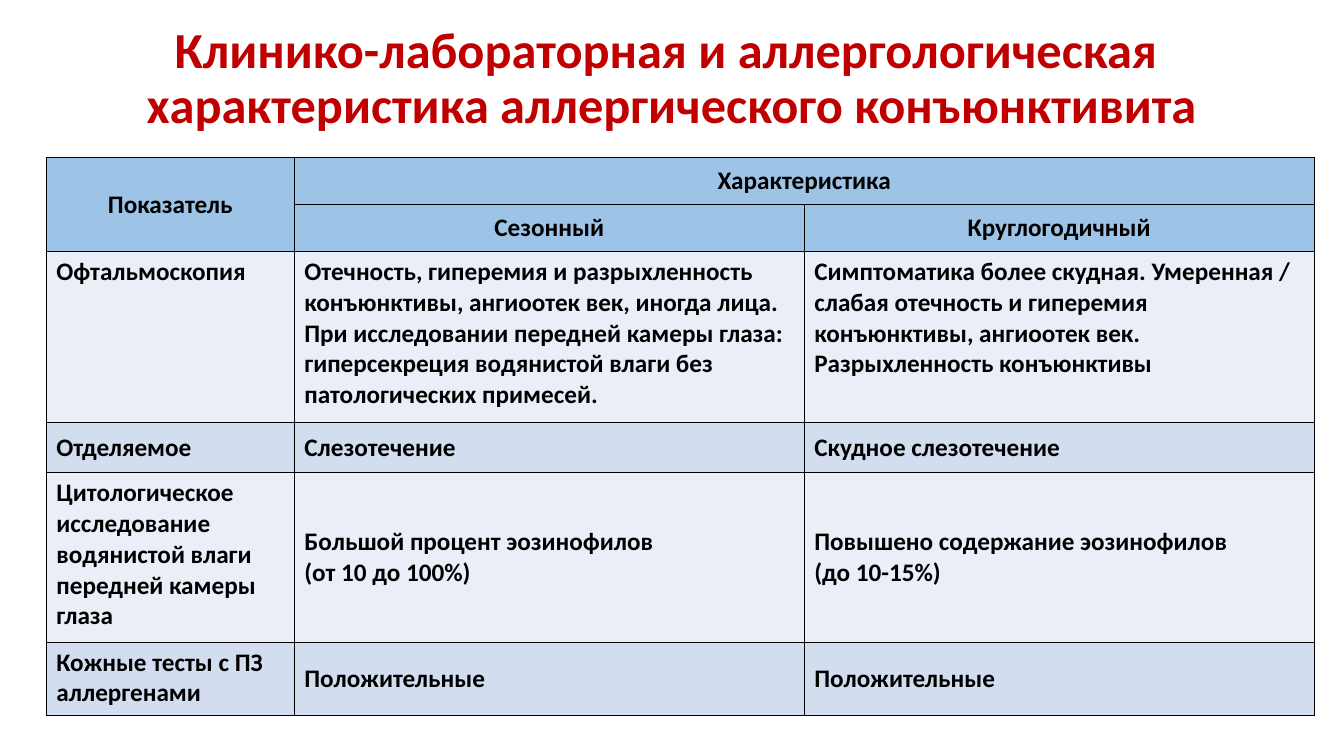
from lxml.etree import SubElement
from pptx import Presentation
from pptx.dml.color import RGBColor
from pptx.enum.text import MSO_ANCHOR, PP_ALIGN
from pptx.oxml.ns import qn
from pptx.util import Pt

COLORS = {
    "title": "C00000",
    "text": "000000",
    "border": "000000",
    "header": "9DC3E6",
    "light": "EAEFF7",
    "dark": "D2DEEF",
}
TITLE = ("Клинико-лабораторная и аллергологическая \v"
         "характеристика аллергического конъюнктивита")
COLUMN_WIDTHS = [177.1, 364.3, 364.3]
ROW_HEIGHTS = [33.6, 33.6, 122, 36, 121, 52.6]
HEADER_ROWS = 2
# Each line of a cell is a paragraph
ROWS = [
    ["Показатель", "Характеристика", ""],
    ["", "Сезонный", "Круглогодичный"],
    ["Офтальмоскопия",
     "Отечность, гиперемия и разрыхленность конъюнктивы, ангиоотек век, иногда лица.\n"
     "При исследовании передней камеры глаза: гиперсекреция водянистой влаги без "
     "патологических примесей.",
     "Симптоматика более скудная. Умеренная / слабая отечность и гиперемия "
     "конъюнктивы, ангиоотек век.\nРазрыхленность конъюнктивы"],
    ["Отделяемое", "Слезотечение", "Скудное слезотечение"],
    ["Цитологическое исследование\nводянистой влаги передней камеры глаза",
     "Большой процент эозинофилов\n(от 10 до 100%)",
     "Повышено содержание эозинофилов\n(до 10-15%)"],
    ["Кожные тесты с ПЗ аллергенами", "Положительные", "Положительные"],
]
TOP_CELLS = {(2, 0), (2, 1), (2, 2), (4, 0), (5, 0)}


def write_text(frame, text, size=18, color="text", align=PP_ALIGN.LEFT, spacing=None):
    frame.text = text
    for para in frame.paragraphs:
        para.alignment = align
        if spacing:
            para.line_spacing = spacing
        for span in para.runs:
            span.font.name = "Calibri"
            span.font.size = Pt(size)
            span.font.bold = True
            span.font.color.rgb = RGBColor.from_string(COLORS[color])


def style_cell(cell, fill):
    # Borders come before the fill in the cell properties
    properties = cell._tc.get_or_add_tcPr()
    for side in ("a:lnL", "a:lnR", "a:lnT", "a:lnB"):
        line = SubElement(properties, qn(side), w=str(Pt(1)))
        solid = SubElement(line, qn("a:solidFill"))
        SubElement(solid, qn("a:srgbClr"), val=COLORS["border"])
    cell.fill.solid()
    cell.fill.fore_color.rgb = RGBColor.from_string(COLORS[fill])


def add_title(page, left, top, width, height):
    title = page.shapes.title
    title.left, title.top, title.width, title.height = map(Pt, (left, top, width, height))
    frame = title.text_frame
    frame.word_wrap = True
    frame.vertical_anchor = MSO_ANCHOR.MIDDLE
    write_text(frame, TITLE, size=36, color="title", align=PP_ALIGN.CENTER, spacing=0.9)


def add_comparison(page, left, top):
    box = map(Pt, (left, top, sum(COLUMN_WIDTHS), sum(ROW_HEIGHTS)))
    table = page.shapes.add_table(len(ROWS), len(COLUMN_WIDTHS), *box).table
    for column, width in zip(table.columns, COLUMN_WIDTHS):
        column.width = Pt(width)
    for row, height in zip(table.rows, ROW_HEIGHTS):
        row.height = Pt(height)

    # Cells: header rows, then alternating bands
    for r, texts in enumerate(ROWS):
        is_header = r < HEADER_ROWS
        fill = "header" if is_header else ("light", "dark")[r % 2]
        align = PP_ALIGN.CENTER if is_header else PP_ALIGN.LEFT
        for c, text in enumerate(texts):
            cell = table.cell(r, c)
            style_cell(cell, fill)
            write_text(cell.text_frame, text, align=align)
            cell.vertical_anchor = MSO_ANCHOR.TOP if (r, c) in TOP_CELLS else MSO_ANCHOR.MIDDLE

    # Merged headers
    table.cell(0, 0).merge(table.cell(1, 0))
    table.cell(0, 1).merge(table.cell(0, 2))


def main():
    deck = Presentation()
    deck.slide_width, deck.slide_height = Pt(960), Pt(540)
    page = deck.slides.add_slide(deck.slide_layouts[5])
    add_title(page, 66, 21.6, 828, 70.6)
    add_comparison(page, 33.1, 112.5)
    deck.save("out.pptx")


if __name__ == "__main__":
    main()
